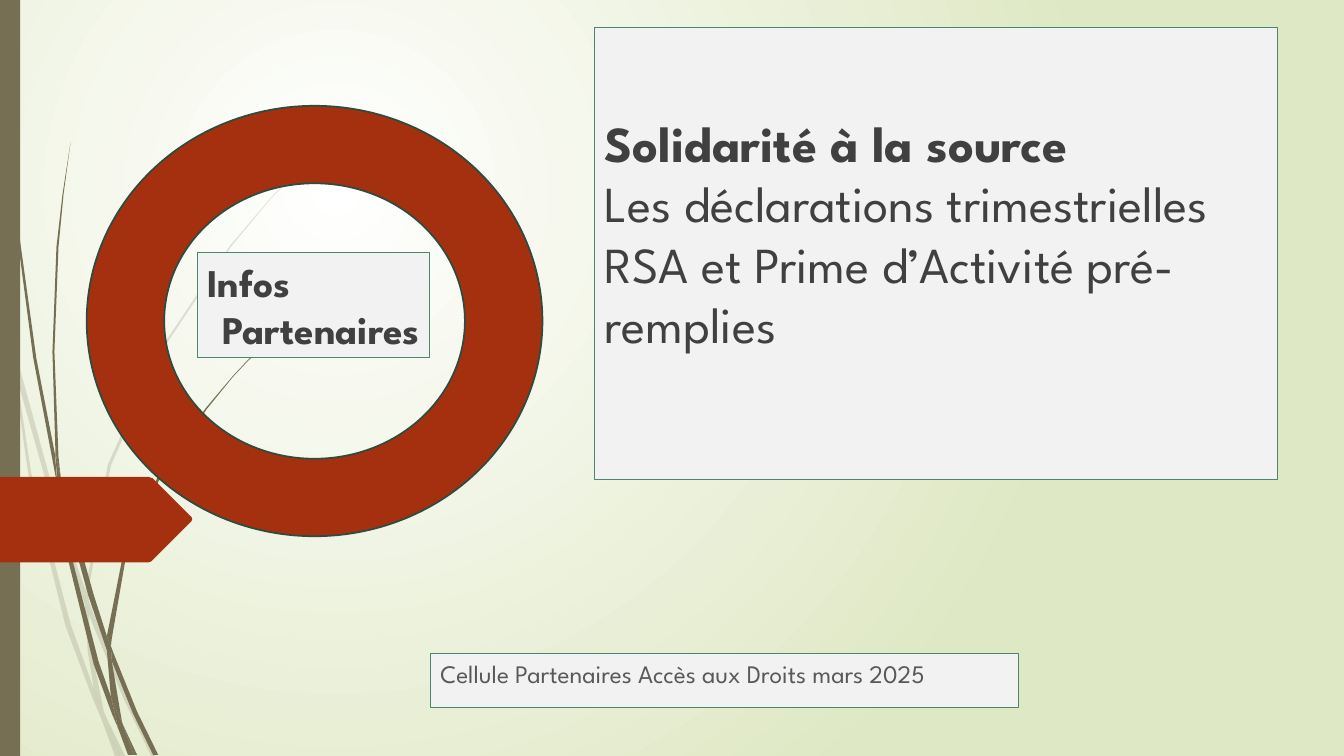
from dataclasses import dataclass

import lxml.etree
import pptx
import pptx.dml.color
import pptx.enum.shapes
import pptx.enum.text
import pptx.oxml.ns
import pptx.util

SHAPE = pptx.enum.shapes.MSO_SHAPE
ALIGN = pptx.enum.text.PP_ALIGN
ANCHOR = pptx.enum.text.MSO_ANCHOR
qn = pptx.oxml.ns.qn


@dataclass(frozen=True)
class Theme:
    font: str = "League Spartan"
    title_size: int = 36
    label_size: int = 28
    subtitle_size: int = 18
    dark: str = "404040"
    grey: str = "595959"
    panel: str = "F2F2F2"
    green: str = "4B866E"
    deep_green: str = "2E4B40"
    red: str = "A53010"
    olive: str = "766F54"
    glow: str = "FFFFFF"
    meadow: str = "DFE8C4"


# Wisp outlines as (column, row) points; one cell is a tenth of an inch
PALE_WISPS = [
    [(1.1, 35), (0.9, 32.2), (0, 28.2), (0, 29.9), (1, 34.4)],
    [(5.8, 52.2), (8.4, 59.9), (8.5, 58.6), (6.2, 52), (1.4, 34.5), (1.7, 37.6)],
    [(9.2, 60.7), (8.8, 59.6), (8.8, 61), (12.3, 69.4), (15, 75), (15.5, 75), (12.7, 69.2)],
    [(11.9, 75), (12.4, 75), (10.5, 71.1)],
    [(9.3, 68.3), (7, 61.9), (3.1, 46.9), (1.7, 37.6), (1.1, 35), (2.8, 47), (6.5, 62.1),
     (9.2, 69.3), (10.1, 71.4), (9.9, 70.7)],
    [(8.4, 59.9), (8.7, 64.6), (9.3, 68.3), (9.6, 69.2), (10.5, 71.1), (10.3, 70.6),
     (9.1, 64.6), (8.8, 61), (8.8, 60.8)],
    [(8.8, 58.4), (11, 46.2), (16, 34.9), (22.9, 24.5), (26.8, 19.8), (29, 17.5),
     (31.2, 15.4), (31.2, 15.3), (28.9, 17.5), (26.8, 19.7), (22.8, 24.4), (15.8, 34.8),
     (10.7, 46.1), (8.5, 58.4), (8.5, 58.6), (8.8, 59.6)],
    [(10.1, 71.4), (11.4, 75), (11.9, 75)],
    [(8.8, 60.8), (8.8, 61), (8.8, 59.6), (8.5, 58.6), (8.4, 59.9)],
    [(9.6, 69.2), (9.3, 68.3), (9.9, 70.7), (10.1, 71.4), (11.9, 75), (10.5, 71.1)],
]
DARK_WISPS = [
    [(0.7, 11), (1.7, 23.3), (3.3, 35.5), (5.6, 47.7), (5.7, 48.1), (5.5, 45.7), (5.5, 45.3),
     (3.6, 35.5), (1.9, 23.2), (0.8, 10.9), (0.5, 4.8), (0.4, 0), (0.3, 0), (0.4, 4.8)],
    [(8.8, 59.2), (10.6, 64.5), (10.6, 63.3), (10.6, 63.1), (9.3, 59), (6, 47.2), (6.4, 50.5)],
    [(11.3, 64.9), (11, 64.1), (11.1, 65.6), (13.2, 70.8), (15.2, 74.9), (15.7, 74.9),
     (13.6, 70.6)],
    [(11, 69.1), (9.8, 65.7), (7.2, 55.6), (6.4, 50.5), (5.7, 47.7), (6.8, 55.7), (9.3, 65.9),
     (11.1, 70.8), (11.7, 72.2), (11.6, 71.7)],
    [(6, 47.2), (5.8, 45.3), (5.4, 34.9), (5.8, 24.5), (6.3, 19.3), (7, 14.1), (6.2, 19.3),
     (5.6, 24.5), (5.2, 34.9), (5.5, 44.9)],
    [(13.3, 74.9), (13.6, 74.9), (12.2, 71.9)],
    [(5.7, 47.7), (6.4, 50.5), (6, 47.2), (5.5, 44.9), (5.5, 45.3)],
    [(11.1, 63.3), (12.5, 55.2), (15.8, 47.6), (20.5, 40.6), (23.1, 37.4), (24.5, 35.9),
     (26.1, 34.4), (26, 34.4), (24.5, 35.8), (23.1, 37.3), (20.4, 40.5), (15.6, 47.4),
     (12.2, 55.1), (10.6, 63.1), (11, 64.1)],
    [(11.7, 72.2), (12.7, 74.9), (13.1, 74.9)],
    [(10.6, 64.5), (11, 69.1), (11.6, 70.6), (12.2, 71.9), (12.1, 71.6), (11.1, 65.6),
     (10.9, 65.1)],
    [(10.6, 64.5), (10.9, 65.1), (11.1, 65.6), (11, 64.1), (10.6, 63.1), (10.6, 63.3)],
    [(11.6, 70.6), (11, 69.1), (11.6, 71.7), (11.7, 72.2), (13, 74.9), (13.3, 74.9),
     (12.2, 71.9)],
]
ARROW_TAG = [(14.7, 55.8), (15, 55.7), (15.1, 55.6), (19, 51.7), (19.07, 51.5), (19, 51.3),
             (15.1, 47.4), (15, 47.4), (14.7, 47.3), (0, 47.3), (0, 55.8)]


class Painter:
    """Holds the theme and the current page; lengths are grid cells."""

    def __init__(self, page, theme):
        self.page = page
        self.theme = theme

    def cells(self, *counts):
        return [pptx.util.Inches(count / 10) for count in counts]

    def colour(self, value):
        return pptx.dml.color.RGBColor.from_string(value)

    def finish(self, shape, fill, line=None, width=0.75):
        shape.shadow.inherit = False
        shape.fill.solid()
        shape.fill.fore_color.rgb = self.colour(fill)
        if line:
            shape.line.color.rgb = self.colour(line)
            shape.line.width = pptx.util.Pt(width)
        else:
            shape.line.fill.background()
        return shape

    def backdrop(self, inner, outer):
        fill = self.page.background.fill
        fill.gradient()
        for stop, value in zip(fill.gradient_stops, (inner, outer)):
            stop.color.rgb = self.colour(value)
        gradient = self.page.element.find(".//" + qn("a:gradFill"))
        gradient.remove(gradient.find(qn("a:lin")))
        radial = lxml.etree.SubElement(gradient, qn("a:path"), {"path": "circle"})
        lxml.etree.SubElement(radial, qn("a:fillToRect"),
                              {"l": "50000", "t": "50000", "r": "100000", "b": "100000"})

    def shape(self, kind, left, top, width, height, fill, line=None, weight=0.75):
        shape = self.page.shapes.add_shape(kind, *self.cells(left, top, width, height))
        return self.finish(shape, fill, line, weight)

    def outline(self, points, fill, shapes=None, opacity=None):
        corners = [self.cells(*point) for point in points]
        builder = (shapes or self.page.shapes).build_freeform(*corners[0], scale=1.0)
        builder.add_line_segments(corners[1:], close=True)
        shape = self.finish(builder.convert_to_shape(), fill)
        if opacity:
            tint = shape.fill._xPr.find(".//" + qn("a:srgbClr"))
            lxml.etree.SubElement(tint, qn("a:alpha"), {"val": str(opacity * 1000)})

    def wisps(self, outlines, opacity=None):
        group = self.page.shapes.add_group_shape()
        for points in outlines:
            self.outline(points, self.theme.olive, group.shapes, opacity)

    def panel(self, left, top, width, height, anchor=ANCHOR.TOP):
        box = self.shape(SHAPE.RECTANGLE, left, top, width, height,
                         self.theme.panel, self.theme.green)
        box.text_frame.word_wrap = True
        box.text_frame.vertical_anchor = anchor
        return box.text_frame

    def style(self, para, size, colour, bold=None, align=ALIGN.LEFT):
        para.alignment = align
        para.font.name = self.theme.font
        para.font.size = pptx.util.Pt(size)
        para.font.color.rgb = self.colour(colour)
        para.font.bold = bold


def main():
    theme = Theme()
    deck = pptx.Presentation()
    deck.slide_width = pptx.util.Inches(13.33)
    deck.slide_height = pptx.util.Inches(7.5)
    painter = Painter(deck.slides.add_slide(deck.slide_layouts[6]), theme)

    # Backdrop, wisps, side bar and arrow tag
    painter.backdrop(theme.glow, theme.meadow)
    painter.wisps(PALE_WISPS, opacity=20)
    painter.wisps(DARK_WISPS)
    painter.shape(SHAPE.RECTANGLE, 0, 0, 2, 75, theme.olive)
    painter.outline(ARROW_TAG, theme.red)

    # Title, raised above the bottom edge of its panel
    title = painter.panel(59, 2.7, 67.7, 44.9, ANCHOR.BOTTOM)
    title.margin_bottom = pptx.util.Inches(1.25)
    para = title.paragraphs[0]
    painter.style(para, theme.title_size, theme.dark)
    span = para.add_run()
    span.text = "Solidarité à la source"
    span.font.bold = True
    para.add_line_break()
    para.add_run().text = "Les déclarations trimestrielles RSA et Prime d’Activité pré-remplies"

    # Subtitle
    para = painter.panel(42.7, 64.8, 58.3, 5.4).paragraphs[0]
    para.text = "Cellule Partenaires Accès aux Droits mars 2025"
    para.space_before = pptx.util.Pt(10)
    painter.style(para, theme.subtitle_size, theme.grey)

    # Ring and its label
    ring = painter.shape(SHAPE.DONUT, 8.6, 10.5, 45.2, 42.7, theme.red, theme.deep_green, 1.25)
    ring.adjustments[0] = 0.18
    label = painter.panel(19.6, 25.1, 23, 10.4)
    label.text = "Infos\nPartenaires"
    for para, align in zip(label.paragraphs, (ALIGN.LEFT, ALIGN.RIGHT)):
        painter.style(para, theme.label_size, theme.dark, True, align)

    deck.save("out.pptx")


if __name__ == "__main__":
    main()
